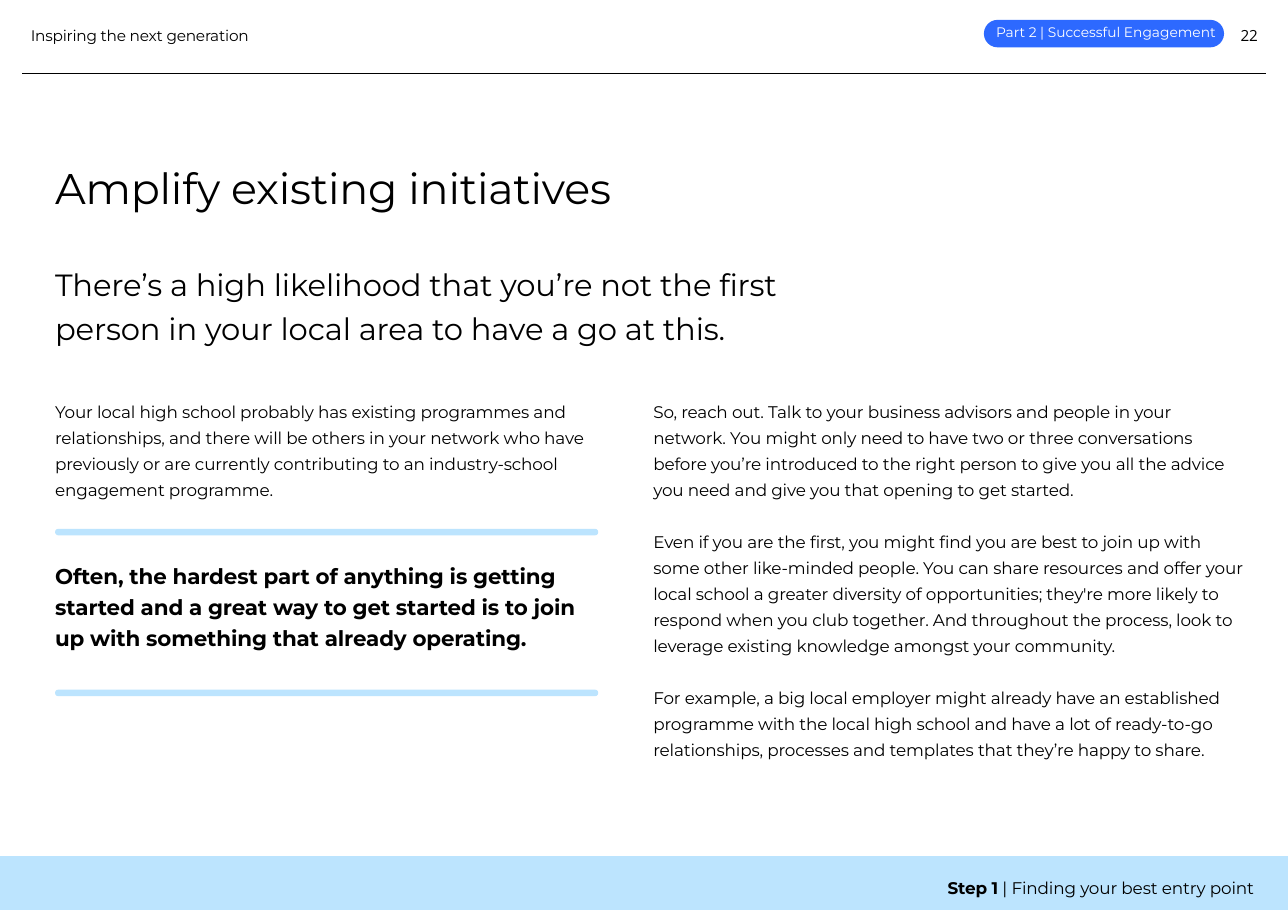
from pptx import Presentation, util as u
from pptx.dml.color import RGBColor
from pptx.enum import shapes, text
from pptx.oxml.ns import qn
from lxml import etree

BLACK, WHITE, SKY, BLUE = "000000", "FFFFFF", "BCE4FE", "2D69FF"
LEFT, RIGHT, TOP = 0.5, 5.93, 3.59  # column edges and top of the body text
LINE = 17  # body line height in points


def colour(value):
    return RGBColor.from_string(value)


def apply(target, values):
    for name, value in values.items():
        setattr(target, name, value)


class Sheet:
    """Holds the text style and the current page."""

    frame_format = dict(margin_left=0, margin_top=0, margin_right=0,
                        margin_bottom=0, word_wrap=True,
                        vertical_anchor=text.MSO_ANCHOR.TOP,
                        auto_size=text.MSO_AUTO_SIZE.NONE)

    def __init__(self, page):
        self.page = page

    def typeset(self, box, spans, size, line, ink=BLACK, font="Montserrat", tracking=-10):
        """Fill a box with one paragraph made of (words, bold) spans."""
        apply(box.text_frame, self.frame_format)
        para = box.text_frame.paragraphs[0]
        apply(para, dict(alignment=text.PP_ALIGN.LEFT, line_spacing=u.Pt(line)))
        for words, bold in spans:
            span = para.add_run()
            span.text = words
            apply(span.font, dict(name=font, size=u.Pt(size), bold=bold))
            span.font.color.rgb = colour(ink)
            span.font._element.set("spc", str(tracking))

    def title(self, place, words, size, line):
        box = self.page.shapes.title
        apply(box, dict(zip(("left", "top", "width", "height"), map(u.Inches, place))))
        self.typeset(box, [(words, False)], size, line)

    def text(self, place, words, size, line, bold=False, **style):
        spans = [(words, bold)] if isinstance(words, str) else words
        box = self.page.shapes.add_textbox(*map(u.Inches, place))
        self.typeset(box, spans, size, line, **style)

    def block(self, place, fill, rounded=True):
        kind = shapes.MSO_SHAPE.ROUNDED_RECTANGLE if rounded else shapes.MSO_SHAPE.RECTANGLE
        box = self.page.shapes.add_shape(kind, *map(u.Inches, place))
        if rounded:
            box.adjustments[0] = 0.5
        box.shadow.inherit = False
        box.fill.solid()
        box.fill.fore_color.rgb = colour(fill)
        box.line.fill.background()

    def rule(self, start, end, ink, width):
        line = self.page.shapes.add_connector(
            shapes.MSO_CONNECTOR.STRAIGHT, *map(u.Inches, start + end))
        line.line.color.rgb = colour(ink)
        line.line.width = u.Pt(width)
        etree.SubElement(line._element.spPr, qn("a:effectLst"))


def main():
    deck = Presentation()
    deck.slide_width, deck.slide_height = u.Inches(11.69), u.Inches(8.26)
    sheet = Sheet(deck.slides.add_slide(deck.slide_layouts[5]))

    # Header
    sheet.rule((0.2, 0.67), (11.49, 0.67), BLACK, 0.75)
    sheet.block((8.93, 0.18, 2.18, 0.25), BLUE)
    sheet.text((0.28, 0.21, 2.4, 0.18), "Inspiring the next generation", 10, 14)
    sheet.text((9.04, 0.19, 2.05, 0.18), "Part 2 | Successful Engagement", 9, 12.6,
               ink=WHITE, tracking=0)
    sheet.text((11.26, 0.21, 0.43, 0.18), "22", 10, 14, font="Open Sans")

    # Title and introduction
    sheet.title((LEFT, 1.39, 6.64, 0.54), "Amplify existing initiatives", 28, 39.2)
    sheet.text((LEFT, 2.34, 6.64, 0.81),
               "There’s a high likelihood that you’re not the first person in your "
               "local area to have a go at this.", 20, 29)

    # Left column with the framed quote
    sheet.text((LEFT, TOP, 4.92, 0.95),
               "Your local high school probably has existing programmes and "
               "relationships, and there will be others in your network who have "
               "previously or are currently contributing to an industry-school "
               "engagement programme.", 11, LINE)
    for bar_top in (4.8, 6.26):
        sheet.block((LEFT, bar_top, 4.93, 0.06), SKY)
    sheet.text((LEFT, 5.07, 4.92, 0.85),
               "Often, the hardest part of anything is getting started and a great "
               "way to get started is to join up with something that already "
               "operating.", 14, 20, bold=True)

    # Right column: passages one empty line apart
    passages = (
        (4, 5.34, "So, reach out. Talk to your business advisors and people in your "
         "network. You might only need to have two or three conversations before "
         "you’re introduced to the right person to give you all the advice you need "
         "and give you that opening to get started."),
        (5, 5.41, "Even if you are the first, you might find you are best to join up "
         "with some other like-minded people. You can share resources and offer your "
         "local school a greater diversity of opportunities; they're more likely to "
         "respond when you club together. And throughout the process, look to "
         "leverage existing knowledge amongst your community."),
        (3, 5.27, "For example, a big local employer might already have an "
         "established programme with the local high school and have a lot of "
         "ready-to-go relationships, processes and templates that they’re happy to "
         "share."),
    )
    top = TOP
    for lines, width, words in passages:
        sheet.text((RIGHT, top, width, lines * LINE / 72), words, 11, LINE)
        top += (lines + 1) * LINE / 72

    # Footer
    sheet.block((0, 7.77, 11.69, 0.49), SKY, rounded=False)
    sheet.text((8.6, 7.94, 3.09, 0.2),
               [("Step 1", True), (" | Finding your best entry point", False)], 11, 15.4)

    deck.save("out.pptx")


if __name__ == "__main__":
    main()
